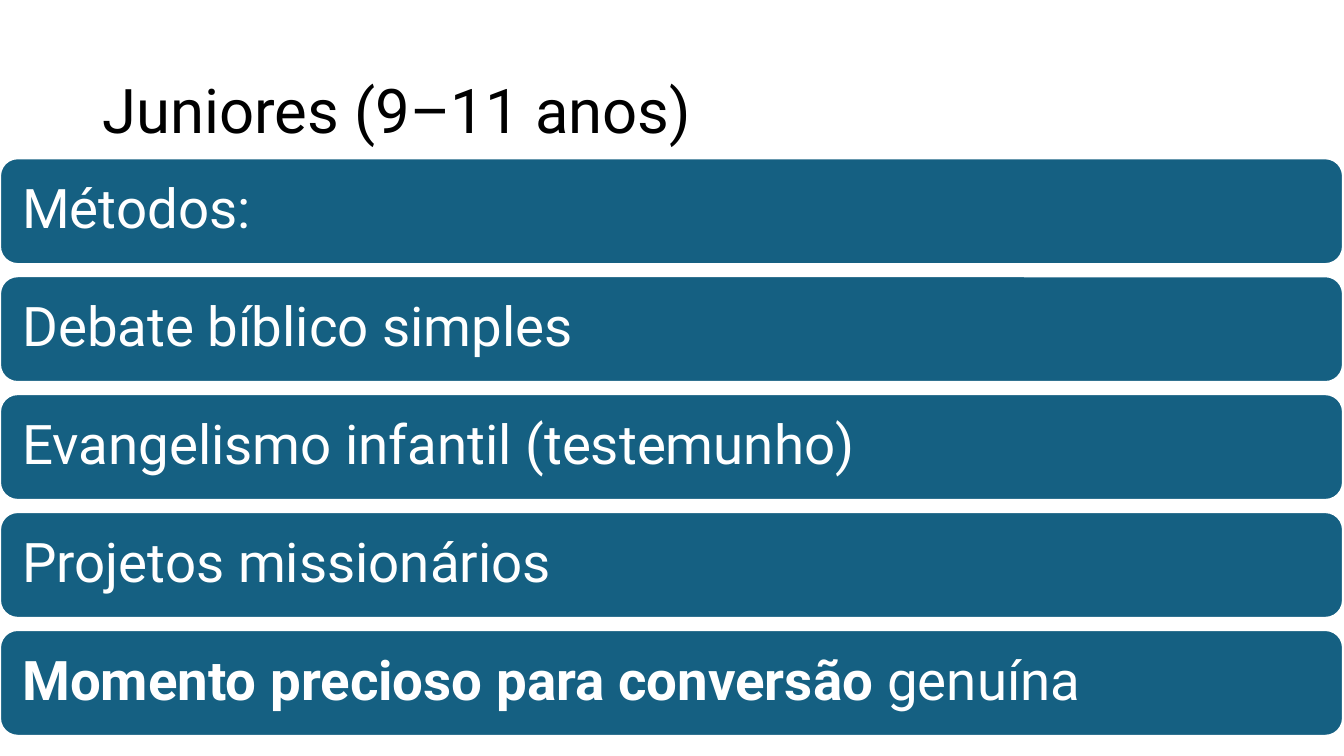
"""Build the slide on teaching methods for juniors (ages 9 to 11)."""
from pptx import Presentation
from pptx.dml.color import RGBColor
from pptx.enum.shapes import MSO_SHAPE as Shape
from pptx.enum.text import MSO_ANCHOR as Anchor, PP_ALIGN as Align
from pptx.util import Inches, Pt


def color(hex_code):
    return RGBColor.from_string(hex_code)


def write(shape, runs, size, hex_code, margin):
    frame = shape.text_frame
    frame.word_wrap = True
    frame.vertical_anchor = Anchor.MIDDLE
    frame.margin_left = frame.margin_right = Inches(margin)
    paragraph = frame.paragraphs[0]
    paragraph.alignment = Align.LEFT
    paragraph.line_spacing = 0.9
    for text, bold in runs:
        run = paragraph.add_run()
        run.text = text
        run.font.name = "Roboto"
        run.font.size = Pt(size)
        run.font.bold = bold
        run.font.color.rgb = color(hex_code)


presentation = Presentation()
presentation.slide_width = Inches(13.33)
presentation.slide_height = Inches(7.5)
slide = presentation.slides.add_slide(presentation.slide_layouts[6])

title = slide.shapes.add_textbox(Inches(0.92), Inches(0.4), Inches(11.5), Inches(1.45))
write(title, [("Juniores (9–11 anos)", False)], 44, "000000", 0.1)

methods = [
    [("Métodos:", False)],
    [("Debate bíblico simples", False)],
    [("Evangelismo infantil (testemunho)", False)],
    [("Projetos missionários", False)],
    [("Momento precioso para conversão", True), (" genuína", False)],
]
first_top, row_pitch, bar_height = 1.57, 1.17, 1.05

for row, runs in enumerate(methods):
    top = first_top + row * row_pitch
    bar = slide.shapes.add_shape(
        Shape.ROUNDED_RECTANGLE, 0, Inches(top), Inches(13.32), Inches(bar_height))
    bar.shadow.inherit = False
    bar.fill.solid()
    bar.fill.fore_color.rgb = color("156082")
    bar.line.color.rgb = color("FFFFFF")
    bar.line.width = Pt(1.5)
    write(bar, runs, 39, "FFFFFF", 0.17)

presentation.save("out.pptx")
